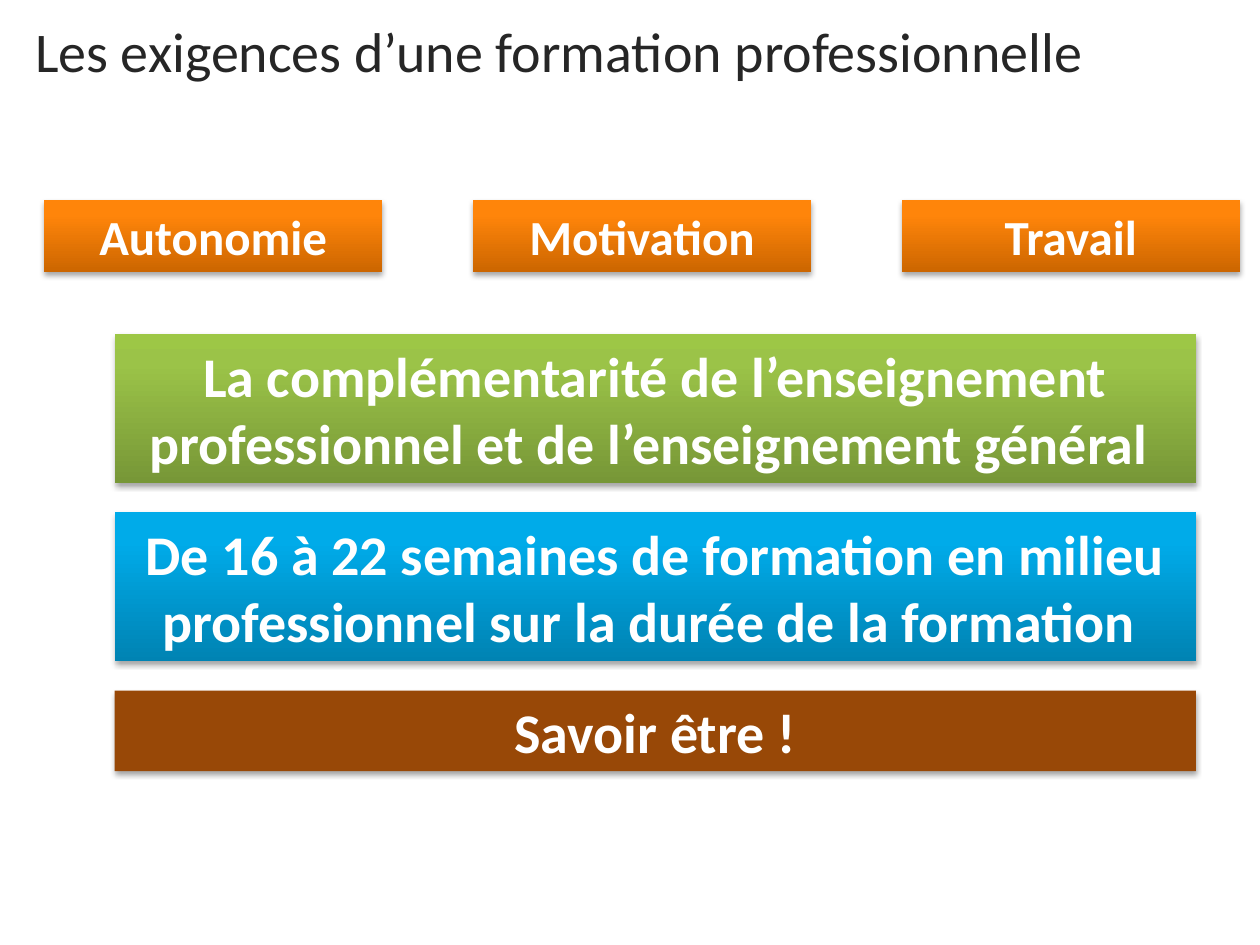
from copy import deepcopy

from lxml import etree
from pptx import Presentation
from pptx.dml.color import RGBColor
from pptx.enum.shapes import MSO_SHAPE
from pptx.enum.text import MSO_ANCHOR, PP_ALIGN
from pptx.oxml import parse_xml
from pptx.oxml.ns import nsdecls, qn
from pptx.util import Pt

RECT = MSO_SHAPE.RECTANGLE
MIDDLE = MSO_ANCHOR.MIDDLE
CENTER, RIGHT = PP_ALIGN.CENTER, PP_ALIGN.RIGHT

WHITE = RGBColor(0xFF, 0xFF, 0xFF)
INK = RGBColor(0x26, 0x26, 0x26)
BROWN = RGBColor(0x98, 0x48, 0x07)
ORANGES = (RGBColor(0xCC, 0x66, 0x00), RGBColor(0xFF, 0x85, 0x0A), RGBColor(0xFF, 0x85, 0x0C))
GREENS = (RGBColor(0x77, 0x97, 0x37), RGBColor(0x9B, 0xC3, 0x48), RGBColor(0x9D, 0xC7, 0x46))
BLUES = (RGBColor(0x00, 0x83, 0xB3), RGBColor(0x00, 0xAB, 0xE9), RGBColor(0x00, 0xAB, 0xEA))
STOPS = (0, 0.8, 1)

TITLE_FONT = {"name": "Calibri", "size": Pt(32), "bold": False}
BAR_FONT = {"name": "Calibri", "size": Pt(32), "bold": True}
CHIP_FONT = {"name": "Calibri", "size": Pt(28), "bold": True}

SHADOW = (
    f'<a:outerShdw {nsdecls("a")} blurRad="{Pt(3.15)}" dist="{Pt(1.8)}" dir="5400000" rotWithShape="0">'
    '<a:srgbClr val="000000"><a:alpha val="35000"/></a:srgbClr></a:outerShdw>'
)

CHIPS = ("Autonomie", "Motivation", "Travail")
BARS = (
    ("La complémentarité de l’enseignement professionnel et de l’enseignement général ", GREENS, 85),
    ("De 16 à 22 semaines de formation en milieu professionnel sur la durée de la formation ", BLUES, 85),
    ("Savoir être !", (BROWN,), 46),
)


def set_text(sp, text, font, color, align):
    """Write one formatted paragraph into a shape."""
    tf = sp.text_frame
    tf.word_wrap = True
    tf.vertical_anchor = MIDDLE
    p = tf.paragraphs[0]
    p.alignment = align
    r = p.add_run()
    r.text = text
    for name, value in font.items():
        setattr(r.font, name, value)
    r.font.color.rgb = color


def set_fill(sp, colors):
    """Fill a shape with one colour or a rising three-stop gradient."""
    if len(colors) == 1:
        sp.fill.solid()
        sp.fill.fore_color.rgb = colors[0]
        return
    sp.fill.gradient()
    sp.fill.gradient_angle = 90
    stop_list = next(sp._element.spPr.iter(qn("a:gsLst")))
    stop_list.append(deepcopy(stop_list[-1]))
    for stop, position, color in zip(sp.fill.gradient_stops, STOPS, colors):
        stop.position = position
        stop.color.rgb = color


def add_block(s, box, text, colors, font):
    """Add a shadowed rectangle with centred white text."""
    sp = s.shapes.add_shape(RECT, *map(Pt, box))
    set_fill(sp, colors)
    sp.line.fill.background()
    sp.shadow.inherit = False
    sp._element.spPr.find(qn("a:effectLst")).append(parse_xml(SHADOW))
    set_text(sp, text, font, WHITE, CENTER)


def add_title(s, box, text):
    """Add the right-aligned slide title."""
    sp = s.shapes.add_textbox(*map(Pt, box))
    set_text(sp, text, TITLE_FONT, INK, RIGHT)


def add_chips(s, box, gap):
    """Spread the qualities in equal columns over the box."""
    left, top, width, height = box
    chip_width = (width - gap * (len(CHIPS) - 1)) / len(CHIPS)
    for i, text in enumerate(CHIPS):
        x = left + i * (chip_width + gap)
        add_block(s, (x, top, chip_width, height), text, ORANGES, CHIP_FONT)


def add_bars(s, left, top, width, gap):
    """Stack the requirement bars with equal gaps."""
    for text, colors, height in BARS:
        add_block(s, (left, top, width, height), text, colors, BAR_FONT)
        top += height + gap


def main():
    """Build and save the slide."""
    prs = Presentation()
    prs.slide_width, prs.slide_height = Pt(720), Pt(540)
    s = prs.slides.add_slide(prs.slide_layouts[6])
    add_title(s, (4.3, 3.6, 622, 50.4), "Les exigences d’une formation professionnelle")
    add_chips(s, (25.2, 114.5, 683.3, 41), 51.8)
    add_bars(s, 65.5, 190.8, 617.8, 16.9)
    prs.save("out.pptx")


if __name__ == "__main__":
    main()
